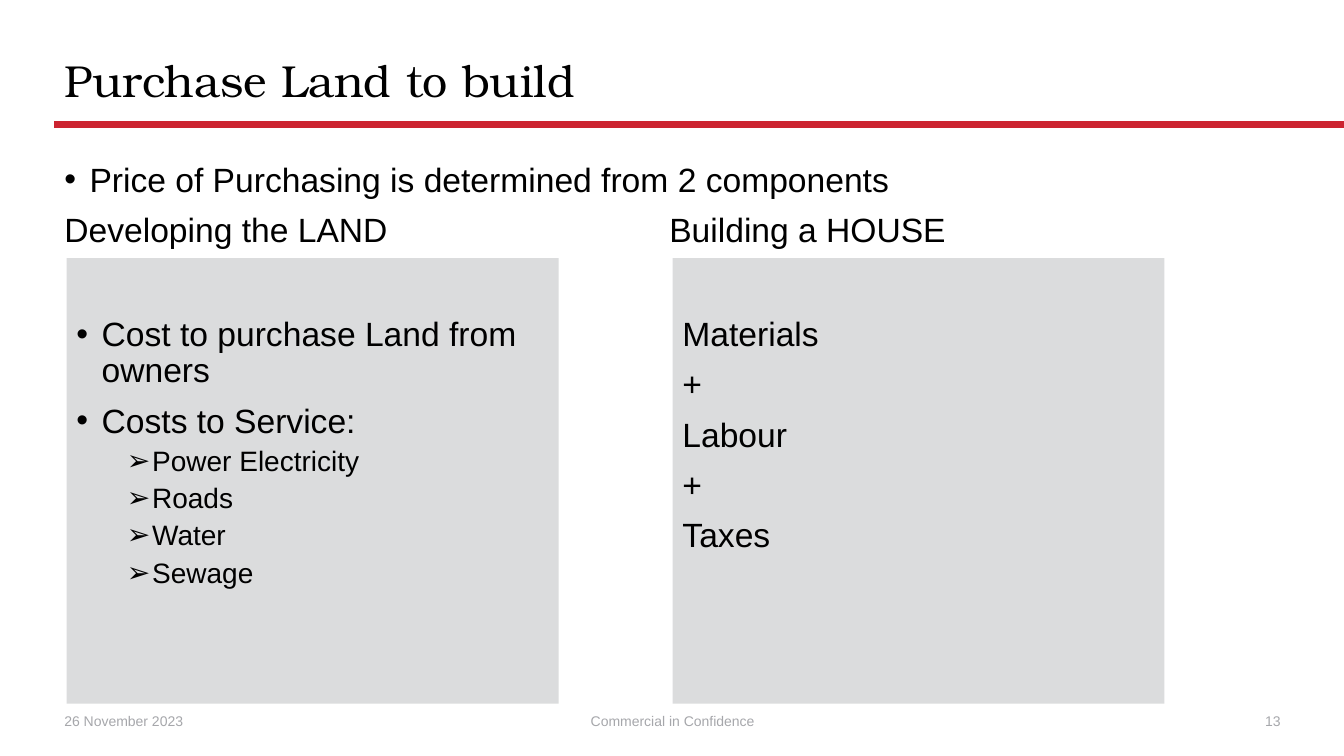
"""Build the slide on the cost components of purchasing land to build."""
import pptx
import pptx.dml.color
import pptx.enum.shapes
import pptx.enum.text
import pptx.oxml.ns
import pptx.util
from lxml import etree

Inches, Pt = pptx.util.Inches, pptx.util.Pt
RGBColor = pptx.dml.color.RGBColor
PP_ALIGN = pptx.enum.text.PP_ALIGN
MIDDLE = pptx.enum.text.MSO_ANCHOR.MIDDLE
qn = pptx.oxml.ns.qn

BLACK = RGBColor(0x00, 0x00, 0x00)
RED = RGBColor(0xCC, 0x24, 0x30)
PANEL_GRAY = RGBColor(0xDB, 0xDC, 0xDD)
FOOTER_GRAY = RGBColor(0xA6, 0xA7, 0xAB)


def set_font(paragraph, name, size, color):
    for run in paragraph.runs:
        run.font.name = name
        run.font.size = Pt(size)
        run.font.color.rgb = color


def fill_text(text_frame, lines):
    text_frame.word_wrap = True
    text_frame.vertical_anchor = pptx.enum.text.MSO_ANCHOR.TOP
    for index, (text, bullet, level) in enumerate(lines):
        paragraph = text_frame.paragraphs[0] if index == 0 else text_frame.add_paragraph()
        paragraph.text = text
        paragraph.level = level
        paragraph.alignment = PP_ALIGN.LEFT
        paragraph.line_spacing = 0.9
        paragraph.space_before = Pt(0 if index == 0 else 5 if level else 10)
        properties = paragraph._p.get_or_add_pPr()
        if bullet:
            properties.set("marL", str(Inches(0.25 + 0.5 * level)))
            properties.set("indent", str(Inches(-0.25)))
            etree.SubElement(properties, qn("a:buFont"), typeface="Arial")
            etree.SubElement(properties, qn("a:buChar"), char=bullet)
        if "\t" in text:
            tabs = etree.SubElement(properties, qn("a:tabLst"))
            etree.SubElement(tabs, qn("a:tab"), pos=str(Inches(6)), algn="l")
        set_font(paragraph, "Arial", 20 if level else 24, BLACK)


presentation = pptx.Presentation()
presentation.slide_width = Inches(13.33)
presentation.slide_height = Inches(7.5)
slide = presentation.slides.add_slide(presentation.slide_layouts[5])

rule = slide.shapes.add_connector(
    pptx.enum.shapes.MSO_CONNECTOR.STRAIGHT,
    Inches(0.54), Inches(1.24), Inches(13.33), Inches(1.24))
rule.line.color.rgb = RED
rule.line.width = Pt(5)
etree.SubElement(rule._element.spPr, qn("a:effectLst"))

footers = [
    ("26 November 2023", 0.54, 3, PP_ALIGN.LEFT),
    ("Commercial in Confidence", 4.42, 4.5, PP_ALIGN.CENTER),
    ("13", 9.8, 3, PP_ALIGN.RIGHT),
]
for text, left, width, alignment in footers:
    footer = slide.shapes.add_textbox(Inches(left), Inches(6.95), Inches(width), Inches(0.4))
    footer.text_frame.word_wrap = True
    footer.text_frame.vertical_anchor = MIDDLE
    footer.text_frame.text = text
    paragraph = footer.text_frame.paragraphs[0]
    paragraph.alignment = alignment
    set_font(paragraph, "Arial", 10, FOOTER_GRAY)

title = slide.shapes.title
title.left, title.top = Inches(0.54), Inches(0.4)
title.width, title.height = Inches(12.26), Inches(0.84)
title.text_frame.text = "Purchase Land to build"
title.text_frame.auto_size = pptx.enum.text.MSO_AUTO_SIZE.NONE
title.text_frame.vertical_anchor = MIDDLE
paragraph = title.text_frame.paragraphs[0]
paragraph.alignment = PP_ALIGN.LEFT
paragraph.line_spacing = 0.9
set_font(paragraph, "TeX Gyre Bonum", 32, BLACK)

introduction = slide.shapes.add_textbox(Inches(0.54), Inches(1.57), Inches(12.26), Inches(0.95))
fill_text(introduction.text_frame, [
    ("Price of Purchasing is determined from 2 components", "•", 0),
    ("Developing the LAND\tBuilding a HOUSE", None, 0),
])

land_costs = [(text, "•", 0) for text in ("Cost to purchase Land from owners", "Costs to Service:")]
land_costs += [(text, "➢", 1) for text in ("Power Electricity", "Roads", "Water", "Sewage")]
house_costs = [(text, None, 0) for text in ("Materials", "+", "Labour", "+", "Taxes")]

for left, lines in ((0.66, land_costs), (6.67, house_costs)):
    panel = slide.shapes.add_shape(
        pptx.enum.shapes.MSO_SHAPE.RECTANGLE,
        Inches(left), Inches(2.56), Inches(4.88), Inches(4.42))
    panel.shadow.inherit = False
    panel.fill.solid()
    panel.fill.fore_color.rgb = PANEL_GRAY
    panel.line.fill.background()
    panel.text_frame.margin_top = Inches(0.59)
    fill_text(panel.text_frame, lines)

presentation.save("out.pptx")
